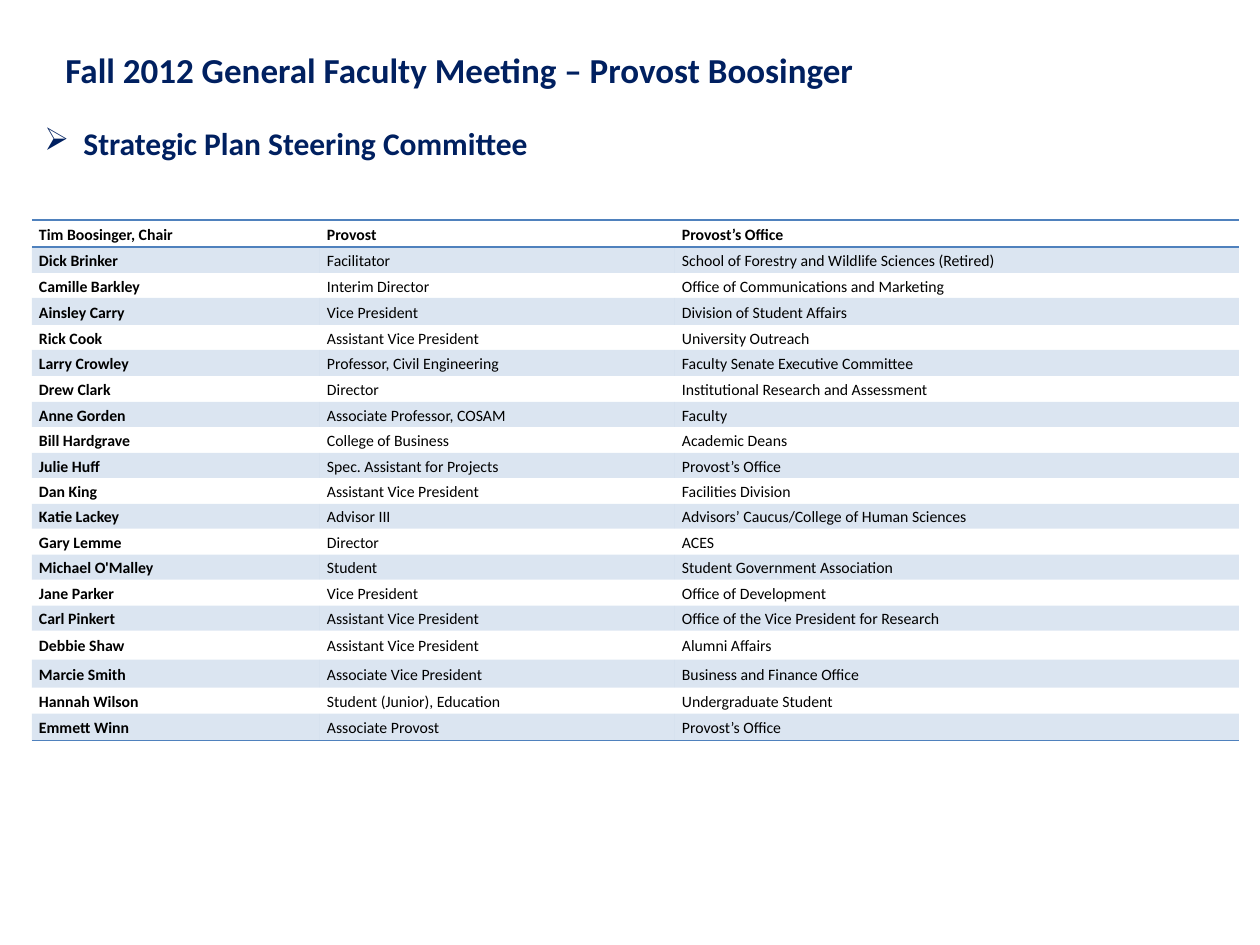
"""Build a slide listing the members of the strategic plan steering committee."""
import pptx
import pptx.dml.color
import pptx.enum.text
import pptx.oxml
import pptx.oxml.ns
import pptx.util

PX = 914400 // 126
NAVY = pptx.dml.color.RGBColor(0x00, 0x20, 0x60)
BLUE = pptx.dml.color.RGBColor(0x4F, 0x81, 0xBD)
BLACK = pptx.dml.color.RGBColor(0x00, 0x00, 0x00)
NAMESPACE = pptx.oxml.ns.nsdecls("a")
NO_STYLE = "{2D5ABB26-0587-4C30-8999-92F81FD0307C}"

COLUMN_WIDTHS = [288, 355, 564]
ROW_HEIGHTS = [27, 26, 25, 27, 25, 26, 26, 25, 26, 25, 26, 25, 26, 25, 26, 25, 29, 28, 26, 27]
MEMBERS = [
    ("Tim Boosinger, Chair", "Provost", "Provost’s Office"),
    ("Dick Brinker", "Facilitator", "School of Forestry and Wildlife Sciences (Retired)"),
    ("Camille Barkley", "Interim Director", "Office of Communications and Marketing"),
    ("Ainsley Carry", "Vice President", "Division of Student Affairs"),
    ("Rick Cook", "Assistant Vice President", "University Outreach"),
    ("Larry Crowley", "Professor, Civil Engineering", "Faculty Senate Executive Committee"),
    ("Drew Clark", "Director", "Institutional Research and Assessment"),
    ("Anne Gorden", "Associate Professor, COSAM", "Faculty"),
    ("Bill Hardgrave", "College of Business", "Academic Deans"),
    ("Julie Huff", "Spec. Assistant for Projects", "Provost’s Office"),
    ("Dan King", "Assistant Vice President", "Facilities Division"),
    ("Katie Lackey", "Advisor III", "Advisors’ Caucus/College of Human Sciences"),
    ("Gary Lemme", "Director", "ACES"),
    ("Michael O'Malley", "Student", "Student Government Association"),
    ("Jane Parker", "Vice President", "Office of Development"),
    ("Carl Pinkert", "Assistant Vice President", "Office of the Vice President for Research"),
    ("Debbie Shaw", "Assistant Vice President", "Alumni Affairs"),
    ("Marcie Smith", "Associate Vice President", "Business and Finance Office"),
    ("Hannah Wilson", "Student (Junior), Education", "Undergraduate Student"),
    ("Emmett Winn", "Associate Provost", "Provost’s Office"),
]


def set_font(para, size, color, bold):
    para.font.name = "Calibri"
    para.font.size = pptx.util.Pt(size)
    para.font.color.rgb = color
    para.font.bold = bold


def add_border(cell, tag):
    cell._tc.get_or_add_tcPr().append(pptx.oxml.parse_xml(
        f'<a:{tag} {NAMESPACE} w="12700"><a:solidFill><a:srgbClr val="{BLUE}"/></a:solidFill></a:{tag}>'))


deck = pptx.Presentation()
deck.slide_width = pptx.util.Inches(10)
deck.slide_height = pptx.util.Inches(7.5)
page = deck.slides.add_slide(deck.slide_layouts[6])

headings = [
    ("Fall 2012 General Faculty Meeting – Provost Boosinger", 53, 42, 1071, 55, 20, None),
    ("Strategic Plan Steering Committee", 32, 118, 1166, 51, 18, "➢"),
]
for text, left, top, width, height, size, bullet in headings:
    box = page.shapes.add_textbox(left * PX, top * PX, width * PX, height * PX)
    box.text_frame.word_wrap = True
    box.text_frame.auto_size = pptx.enum.text.MSO_AUTO_SIZE.SHAPE_TO_FIT_TEXT
    para = box.text_frame.paragraphs[0]
    para.text = text
    if bullet:
        properties = para._p.get_or_add_pPr()
        properties.set("marL", str(39 * PX))
        properties.set("indent", str(-39 * PX))
        properties.append(pptx.oxml.parse_xml(f'<a:buChar {NAMESPACE} char="{bullet}"/>'))
    set_font(para, size, NAVY, True)

frame = page.shapes.add_table(
    len(MEMBERS), len(COLUMN_WIDTHS), 32 * PX, 220 * PX,
    sum(COLUMN_WIDTHS) * PX, sum(ROW_HEIGHTS) * PX)
table = frame.table
table._tbl.tblPr.find(pptx.oxml.ns.qn("a:tableStyleId")).text = NO_STYLE
for column, width in zip(table.columns, COLUMN_WIDTHS):
    column.width = width * PX

last = len(MEMBERS) - 1
for index, member in enumerate(MEMBERS):
    table.rows[index].height = ROW_HEIGHTS[index] * PX
    for position, text in enumerate(member):
        cell = table.cell(index, position)
        cell.margin_left = cell.margin_right = 7 * PX
        cell.margin_top = cell.margin_bottom = 0
        cell.vertical_anchor = pptx.enum.text.MSO_ANCHOR.MIDDLE
        if index == 0:
            add_border(cell, "lnT")
        if index in (0, last):
            add_border(cell, "lnB")
        if index % 2:
            cell.fill.solid()
            cell.fill.fore_color.rgb = BLUE
            color = cell._tc.tcPr.find(pptx.oxml.ns.qn("a:solidFill"))[0]
            color.append(pptx.oxml.parse_xml(f'<a:alpha {NAMESPACE} val="20000"/>'))
        else:
            cell.fill.background()
        para = cell.text_frame.paragraphs[0]
        para.text = text
        para.line_spacing = 1.15
        set_font(para, 9, BLACK, index == 0 or position == 0)

deck.save("out.pptx")
